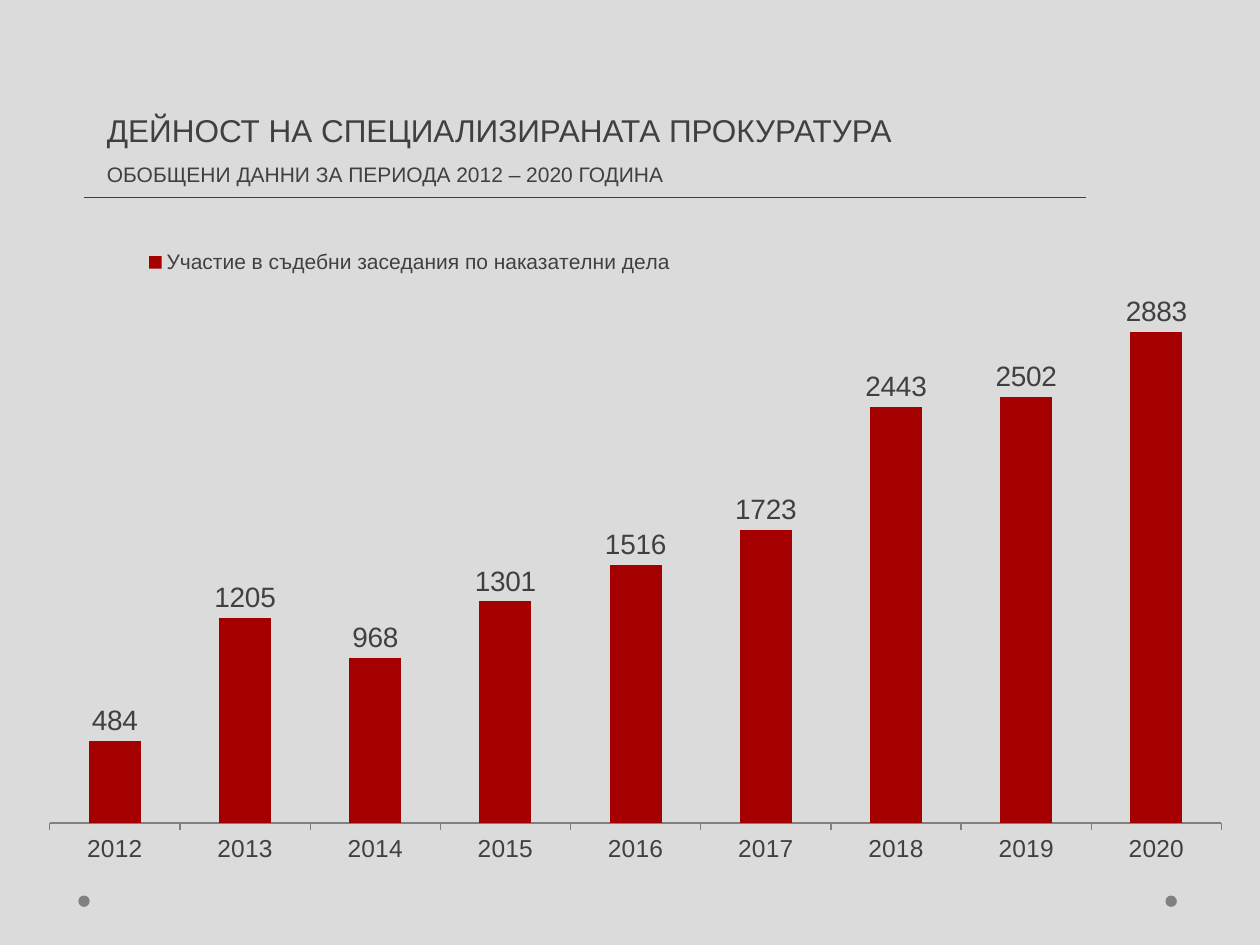
"""Build the slide with the yearly column chart of court hearings."""
import lxml.etree
import pptx
import pptx.chart.data
import pptx.dml.color
import pptx.enum.chart
import pptx.enum.shapes
import pptx.enum.text
import pptx.oxml
import pptx.oxml.ns
import pptx.util

Pt = pptx.util.Pt
qn = pptx.oxml.ns.qn
enum = pptx.enum.chart
colors = {"back": "DBDBDB", "text": "404040", "dot": "808080", "bar": "A40000"}
colors = {k: pptx.dml.color.RGBColor.from_string(v) for k, v in colors.items()}


def style(font, size):
    font.name = "Arial"
    font.size = Pt(size)
    font.bold = False
    font.color.rgb = colors["text"]


def layout(x, y, w, h, inner=False):
    node = lxml.etree.Element(qn("c:layout"))
    manual = lxml.etree.SubElement(node, qn("c:manualLayout"))
    parts = [("layoutTarget", "inner")] if inner else []
    parts += [("xMode", "edge"), ("yMode", "edge")]
    parts += [("x", x), ("y", y), ("w", w), ("h", h)]
    for tag, val in parts:
        lxml.etree.SubElement(manual, qn("c:" + tag)).set("val", str(val))
    return node


deck = pptx.Presentation()
deck.slide_width, deck.slide_height = Pt(720), Pt(540)
slide = deck.slides.add_slide(deck.slide_layouts[6])
slide.background.fill.solid()
slide.background.fill.fore_color.rgb = colors["back"]
shapes = slide.shapes

for left in (666, 44.75):
    dot = shapes.add_shape(pptx.enum.shapes.MSO_SHAPE.OVAL, Pt(left), Pt(511.75), Pt(6.5), Pt(6.5))
    dot.shadow.inherit = False
    dot.fill.solid()
    dot.fill.fore_color.rgb = colors["dot"]
    dot.line.fill.background()

title = shapes.add_textbox(Pt(54), Pt(49), Pt(533), Pt(62))
frame = title.text_frame
frame.word_wrap = True
frame.auto_size = pptx.enum.text.MSO_AUTO_SIZE.SHAPE_TO_FIT_TEXT
frame.text = "ДЕЙНОСТ НА СПЕЦИАЛИЗИРАНАТА ПРОКУРАТУРА\nОБОБЩЕНИ ДАННИ ЗА ПЕРИОДА 2012 – 2020 ГОДИНА"
for para, size in zip(frame.paragraphs, (18, 12)):
    para.line_spacing = 1.5
    style(para.runs[0].font, size)

rule = shapes.add_connector(pptx.enum.shapes.MSO_CONNECTOR.STRAIGHT, Pt(47.75), Pt(113), Pt(620.5), Pt(113))
rule.line.color.rgb = colors["text"]
rule.line.width = Pt(0.75)
lxml.etree.SubElement(rule._element.spPr, qn("a:effectLst"))

data = pptx.chart.data.CategoryChartData()
data.categories = [str(year) for year in range(2012, 2021)]
data.add_series("Участие в съдебни заседания по наказателни дела",
                (484, 1205, 968, 1301, 1516, 1723, 2443, 2502, 2883))
chart = shapes.add_chart(enum.XL_CHART_TYPE.COLUMN_CLUSTERED,
                         Pt(14.5), Pt(121.75), Pt(697.5), Pt(403), data).chart
chart.has_title = False
chart.font.name = "Vollkorn"
chart.font.size = Pt(18)

years = chart.category_axis
years.major_tick_mark = enum.XL_TICK_MARK.OUTSIDE
years.format.line.color.rgb = colors["dot"]
years.format.line.width = Pt(0.75)
style(years.tick_labels.font, 14)
scale = chart.value_axis
scale.minimum_scale, scale.maximum_scale = 0, 3500
scale.has_major_gridlines = False
scale.visible = False

plot = chart.plots[0]
plot.gap_width = 150
plot.vary_by_categories = False
bars = plot.series[0]
bars.format.fill.solid()
bars.format.fill.fore_color.rgb = colors["bar"]
labels = bars.data_labels
labels.show_value = True
labels.position = enum.XL_LABEL_POSITION.OUTSIDE_END
style(labels.font, 16)

chart.has_legend = True
legend = chart.legend
legend.position = enum.XL_LEGEND_POSITION.BOTTOM
legend.include_in_layout = False
style(legend.font, 12)

area = chart._chartSpace.chart.plotArea
for root, spot, node in (
    (area, 0, layout(0.02, 0.02, 0.96, 0.845, True)),
    (legend._element, 1, layout(0.085, 0.04, 0.46, 0.06)),
):
    for old in root.findall(qn("c:layout")):
        root.remove(old)
    root.insert(spot, node)

deck.save("out.pptx")
